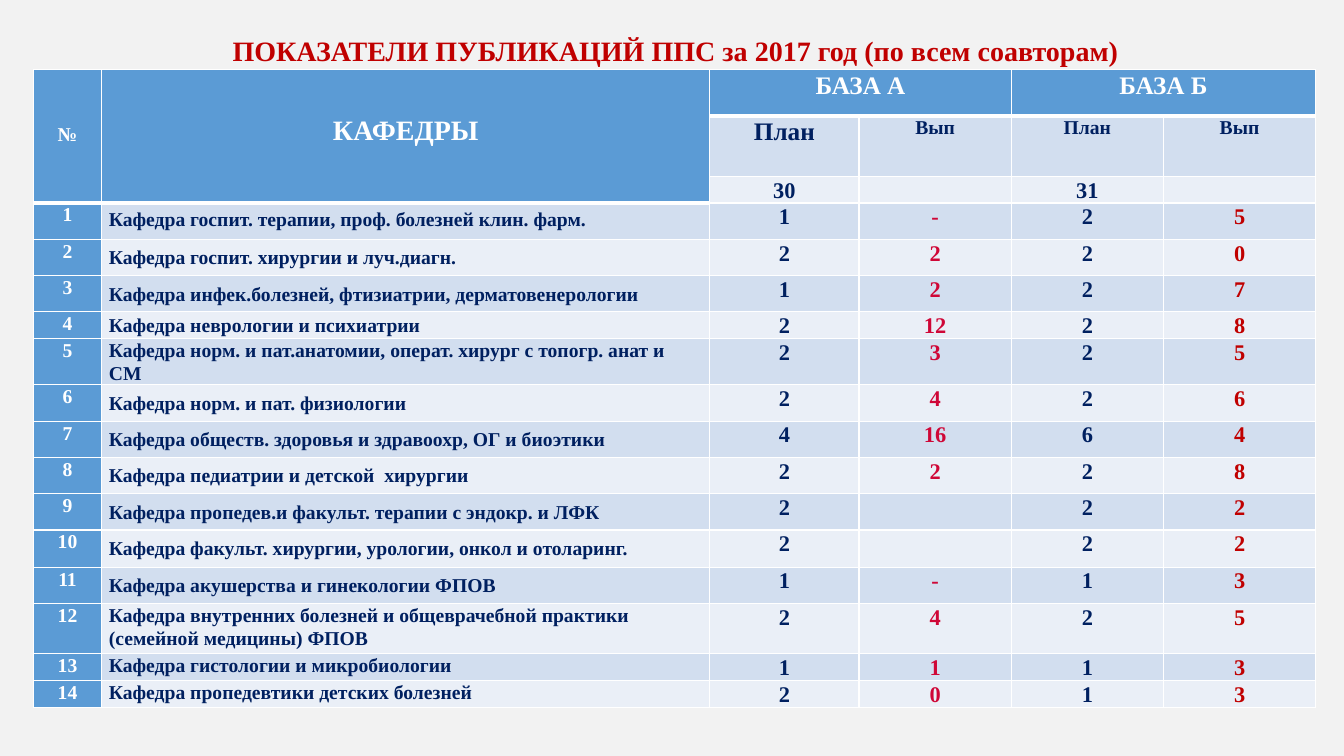
from lxml.etree import SubElement
from pptx import Presentation
from pptx.dml.color import RGBColor
from pptx.enum.text import MSO_ANCHOR as Anchor, MSO_AUTO_SIZE as AutoSize, PP_ALIGN as Align
from pptx.oxml.ns import qn
from pptx.util import Inches, Pt

# Content
TITLE = "ПОКАЗАТЕЛИ ПУБЛИКАЦИЙ ППС за 2017 год (по всем соавторам)"
HEADER = [
    ("№", "КАФЕДРЫ", "БАЗА А", "", "БАЗА Б", ""),
    ("", "", "План", "Вып", "План", "Вып"),
    ("", "", "30", "", "31", ""),
]
# Department, then plan and result for each of the two databases
DEPARTMENTS = [
    ("Кафедра госпит. терапии, проф. болезней клин. фарм.", "1", "-", "2", "5"),
    ("Кафедра госпит. хирургии и луч.диагн.", "2", "2", "2", "0"),
    ("Кафедра инфек.болезней, фтизиатрии, дерматовенерологии", "1", "2", "2", "7"),
    ("Кафедра неврологии и психиатрии", "2", "12", "2", "8"),
    ("Кафедра норм. и пат.анатомии, операт. хирург с топогр. анат и СМ", "2", "3", "2", "5"),
    ("Кафедра норм. и пат. физиологии", "2", "4", "2", "6"),
    ("Кафедра обществ. здоровья и здравоохр, ОГ и биоэтики", "4", "16", "6", "4"),
    ("Кафедра педиатрии и детской  хирургии", "2", "2", "2", "8"),
    ("Кафедра пропедев.и факульт. терапии с эндокр. и ЛФК", "2", "", "2", "2"),
    ("Кафедра факульт. хирургии, урологии, онкол и отоларинг.", "2", "", "2", "2"),
    ("Кафедра акушерства и гинекологии ФПОВ", "1", "-", "1", "3"),
    ("Кафедра внутренних болезней и общеврачебной практики (семейной медицины) ФПОВ",
     "2", "4", "2", "5"),
    ("Кафедра гистологии и микробиологии", "1", "1", "1", "3"),
    ("Кафедра пропедевтики детских болезней", "2", "0", "1", "3"),
]
MERGES = [((0, 0), (2, 0)), ((0, 1), (2, 1)), ((0, 2), (0, 3)), ((0, 4), (0, 5))]
COLUMN_WIDTHS = [0.68, 6.03, 1.48, 1.51, 1.51, 1.51]
ROW_HEIGHTS = [0.46, 0.6, 0.26, 0.36, 0.36, 0.36, 0.26, 0.46, 0.36,
               0.36, 0.36, 0.36, 0.37, 0.36, 0.5, 0.26, 0.26]

# Look
FONT = "Times New Roman"
BACKGROUND = RGBColor(0xF2, 0xF2, 0xF2)
WHITE = RGBColor(0xFF, 0xFF, 0xFF)
BLUE = RGBColor(0x5B, 0x9B, 0xD5)
BAND_DARK = RGBColor(0xD2, 0xDE, 0xEF)
BAND_LIGHT = RGBColor(0xEA, 0xEF, 0xF7)
NAVY = RGBColor(0x00, 0x20, 0x60)
RED = RGBColor(0xC0, 0x00, 0x00)
CRIMSON = RGBColor(0xCF, 0x07, 0x37)
COLUMN_COLORS = [WHITE, NAVY, NAVY, CRIMSON, NAVY, RED]
HEADER_SIZES = [(14, 20, 18, 18, 18, 18), (14, 14, 18, 14, 14, 14), (14, 14, 16, 16, 16, 16)]
BODY_SIZES = (14, 14, 16, 16, 16, 16)


def write(paragraph, text, size, color):
    run = paragraph.add_run()
    run.text = text
    run.font.name, run.font.size, run.font.bold = FONT, Pt(size), True
    run.font.color.rgb = color


def add_borders(cell, row, col):
    # A thick rule closes the heading cells
    heading_end = 0 if col > 1 else 2
    widths = {"L": 1, "R": 1,
              "T": 3 if row == heading_end + 1 else 1,
              "B": 3 if row == heading_end else 1}
    properties = cell._tc.get_or_add_tcPr()
    for side, width in widths.items():
        line = SubElement(properties, qn(f"a:ln{side}"), w=str(Pt(width)))
        SubElement(SubElement(line, qn("a:solidFill")), qn("a:srgbClr"), val=str(WHITE))


def format_cell(cell, row, col, text):
    in_header = row < len(HEADER)
    is_heading = row == 0 or col == 0 or (in_header and col == 1)
    cell.margin_left = cell.margin_right = Inches(0.07)
    cell.margin_top = cell.margin_bottom = 0
    add_borders(cell, row, col)
    cell.fill.solid()
    cell.fill.fore_color.rgb = BLUE if is_heading else (BAND_DARK if row % 2 else BAND_LIGHT)

    # Names and the tall headings are centred vertically, except in the last three rows
    middle = (row == 0 and col < 2) or (col == 1 and row < len(ROW_HEIGHTS) - 3)
    cell.vertical_anchor = Anchor.MIDDLE if middle else Anchor.TOP
    paragraph = cell.text_frame.paragraphs[0]
    paragraph.alignment = Align.LEFT if col == 1 and not in_header else Align.CENTER
    exact = (col < 2 and row == 0) or (col == 1 and row == len(HEADER))
    paragraph.line_spacing = Pt(14.1) if exact else 1.07
    if text:
        size = HEADER_SIZES[row][col] if in_header else BODY_SIZES[col]
        color = WHITE if is_heading else NAVY if in_header else COLUMN_COLORS[col]
        write(paragraph, text, size, color)
    else:
        SubElement(paragraph._p, qn("a:endParaRPr"), sz="1200")


# Slide
deck = Presentation()
deck.slide_width, deck.slide_height = Inches(13.33), Inches(7.5)
slide = deck.slides.add_slide(deck.slide_layouts[5])
slide.background.fill.solid()
slide.background.fill.fore_color.rgb = BACKGROUND

# Title
heading = slide.shapes.title
heading.left, heading.top = Inches(0.78), Inches(0.32)
heading.width, heading.height = Inches(11.84), Inches(1.19)
frame = heading.text_frame
frame.word_wrap, frame.auto_size = True, AutoSize.NONE
frame.vertical_anchor = Anchor.TOP
frame.paragraphs[0].alignment = Align.CENTER
frame.paragraphs[0].line_spacing = 0.9
write(frame.paragraphs[0], TITLE, 20, RED)

# Table of publications
rows = HEADER + [(str(n), *values) for n, values in enumerate(DEPARTMENTS, 1)]
publications = slide.shapes.add_table(
    len(rows), len(COLUMN_WIDTHS), Inches(0.33), Inches(0.69),
    Inches(sum(COLUMN_WIDTHS)), Inches(sum(ROW_HEIGHTS))).table
for column, width in zip(publications.columns, COLUMN_WIDTHS):
    column.width = Inches(width)
for table_row, height in zip(publications.rows, ROW_HEIGHTS):
    table_row.height = Inches(height)
for first, last in MERGES:
    publications.cell(*first).merge(publications.cell(*last))
for r, values in enumerate(rows):
    for c, text in enumerate(values):
        format_cell(publications.cell(r, c), r, c, text)

deck.save("out.pptx")
